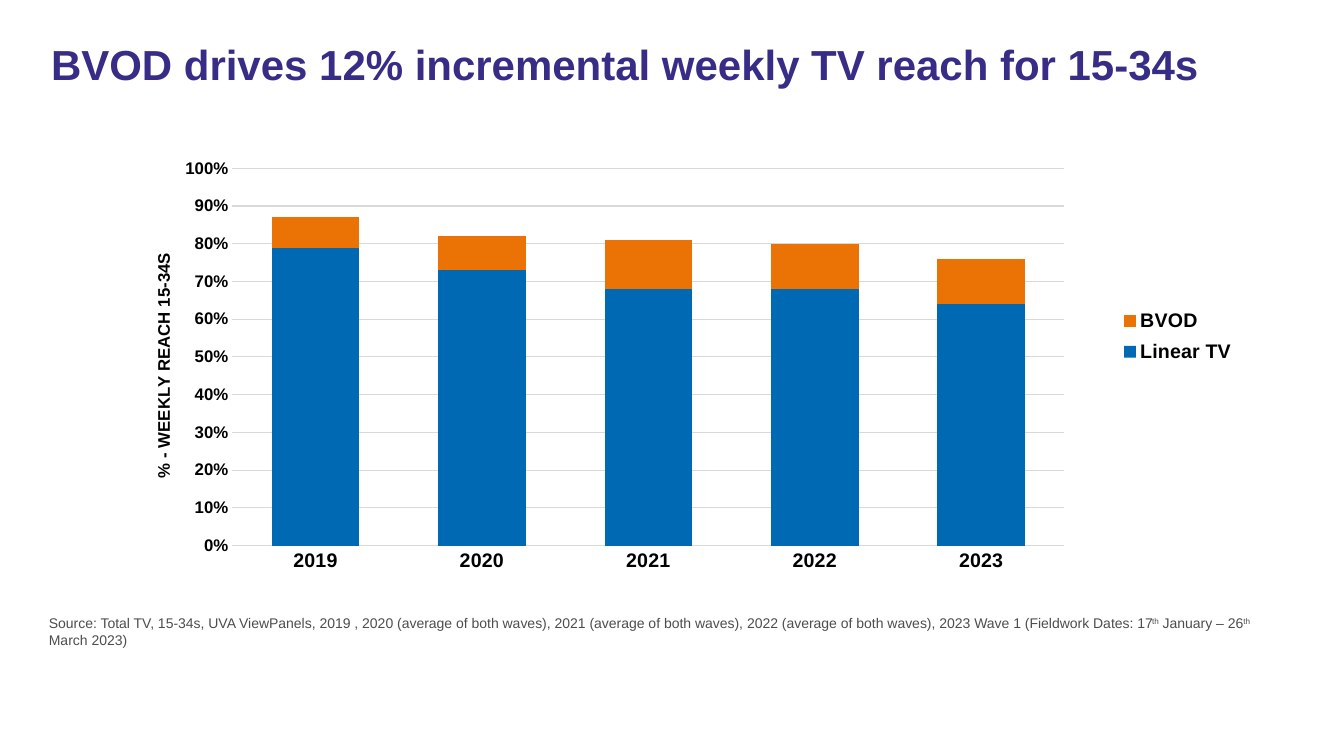
from dataclasses import dataclass

from lxml.etree import SubElement
from pptx import Presentation
from pptx.chart.data import CategoryChartData
from pptx.dml.color import RGBColor
from pptx.enum.chart import XL_CHART_TYPE as ChartType, XL_LEGEND_POSITION as LegendPos
from pptx.enum.chart import XL_TICK_MARK as Tick
from pptx.enum.text import MSO_ANCHOR as Anchor, PP_ALIGN as Align
from pptx.oxml.ns import qn
from pptx.util import Pt


@dataclass(frozen=True)
class Theme:
    font: str = "Arial"
    title: str = "372D87"
    text: str = "000000"
    source: str = "4D4D4D"
    grid: str = "D9D9D9"
    linear: str = "0069B4"
    bvod: str = "EB7305"
    title_size: int = 30
    label_size: int = 14
    axis_size: int = 12
    source_size: int = 10


THEME = Theme()
EMU_PER_PX = 914400 / 100.8

YEARS = ["2019", "2020", "2021", "2022", "2023"]
REACH = [
    ("Linear TV", THEME.linear, [0.79, 0.73, 0.68, 0.68, 0.64]),
    ("BVOD", THEME.bvod, [0.08, 0.09, 0.13, 0.12, 0.12]),
]
SOURCE = [
    ("Source: Total TV, 15-34s, UVA ViewPanels, 2019 , 2020 (average of both waves), "
     "2021 (average of both waves), 2022 (average of both waves), "
     "2023 Wave 1 (Fieldwork Dates: 17", False),
    ("th", True),
    (" January – 26", False),
    ("th", True),
    (" March 2023)", False),
]


def px(n):
    return round(n * EMU_PER_PX)


def box(*lengths):
    return [px(n) for n in lengths]


def style_font(font, size, color, bold=False):
    font.name = THEME.font
    font.size = Pt(size)
    font.bold = bold
    font.color.rgb = RGBColor.from_string(color)


def add_text(p, text, *, size, color, bold=False, superscript=False):
    r = p.add_run()
    r.text = text
    style_font(r.font, size, color, bold)
    if superscript:
        r._r.get_or_add_rPr().set("baseline", "30000")


def add_title(s, text):
    sp = s.shapes.title
    sp.left, sp.top, sp.width, sp.height = box(41, 39, 1250, 113)
    tf = sp.text_frame
    tf.word_wrap = True
    tf.vertical_anchor = Anchor.TOP
    p = tf.paragraphs[0]
    p.alignment = Align.LEFT
    p.line_spacing = 0.9
    add_text(p, text, size=THEME.title_size, color=THEME.title, bold=True)


def add_source(s, parts):
    tf = s.shapes.add_textbox(*box(39, 610, 1250, 33)).text_frame
    tf.word_wrap = True
    for text, superscript in parts:
        add_text(tf.paragraphs[0], text, size=THEME.source_size,
                 color=THEME.source, superscript=superscript)


def place(element, index, inner=False, **fractions):
    for old in element.findall(qn("c:layout")):
        element.remove(old)
    layout = SubElement(element, qn("c:layout"))
    element.insert(index, layout)
    manual = SubElement(layout, qn("c:manualLayout"))
    if inner:
        SubElement(manual, qn("c:layoutTarget")).set("val", "inner")
    for name in "xy":
        SubElement(manual, qn(f"c:{name}Mode")).set("val", "edge")
    for name, value in fractions.items():
        SubElement(manual, qn(f"c:{name}")).set("val", str(value))


def style_axis(axis, size):
    axis.major_tick_mark = axis.minor_tick_mark = Tick.NONE
    style_font(axis.tick_labels.font, size, THEME.text, True)


def style_line(line):
    line.color.rgb = RGBColor.from_string(THEME.grid)
    line.width = Pt(0.75)


def style_value_axis(axis, title):
    style_axis(axis, THEME.axis_size)
    axis.minimum_scale, axis.maximum_scale, axis.major_unit = 0, 1, 0.1
    axis.tick_labels.number_format = "0%"
    axis.tick_labels.number_format_is_linked = False
    axis.format.line.fill.background()
    axis.has_major_gridlines = True
    style_line(axis.major_gridlines.format.line)
    tf = axis.axis_title.text_frame
    add_text(tf.paragraphs[0], title, size=THEME.axis_size, color=THEME.text, bold=True)
    tf._txBody.bodyPr.set("rot", "-5400000")
    tf._txBody.bodyPr.set("vert", "horz")
    place(axis.axis_title._element, 1, x=0.01, y=0.21)


def add_legend(chart):
    chart.has_legend = True
    legend = chart.legend
    legend.position = LegendPos.RIGHT
    legend.include_in_layout = False
    style_font(legend.font, THEME.label_size, THEME.text, True)
    place(legend._element, 1, x=0.88, y=0.32, w=0.11, h=0.15)


def add_reach_chart(s):
    data = CategoryChartData(number_format="0%")
    data.categories = YEARS
    for name, _, values in REACH:
        data.add_series(name, values)
    chart = s.shapes.add_chart(
        ChartType.COLUMN_STACKED, *box(139, 152, 1111, 467), data).chart
    chart.has_title = False
    style_font(chart.font, THEME.axis_size, THEME.text, True)
    plot = chart.plots[0]
    plot.gap_width, plot.overlap = 90, 100
    plot.vary_by_categories = False
    for series, (_, color, _) in zip(plot.series, REACH):
        series.format.fill.solid()
        series.format.fill.fore_color.rgb = RGBColor.from_string(color)
    style_axis(chart.category_axis, THEME.label_size)
    style_line(chart.category_axis.format.line)
    style_value_axis(chart.value_axis, "% - WEEKLY REACH 15-34S")
    add_legend(chart)
    plot_area = chart._chartSpace.chart.plotArea
    place(plot_area, 0, inner=True, x=0.084, y=0.035, w=0.749, h=0.808)


def main():
    prs = Presentation()
    prs.slide_width, prs.slide_height = box(1344, 756)
    s = prs.slides.add_slide(prs.slide_layouts[5])
    add_title(s, "BVOD drives 12% incremental weekly TV reach for 15-34s")
    add_reach_chart(s)
    add_source(s, SOURCE)
    prs.save("out.pptx")


if __name__ == "__main__":
    main()
